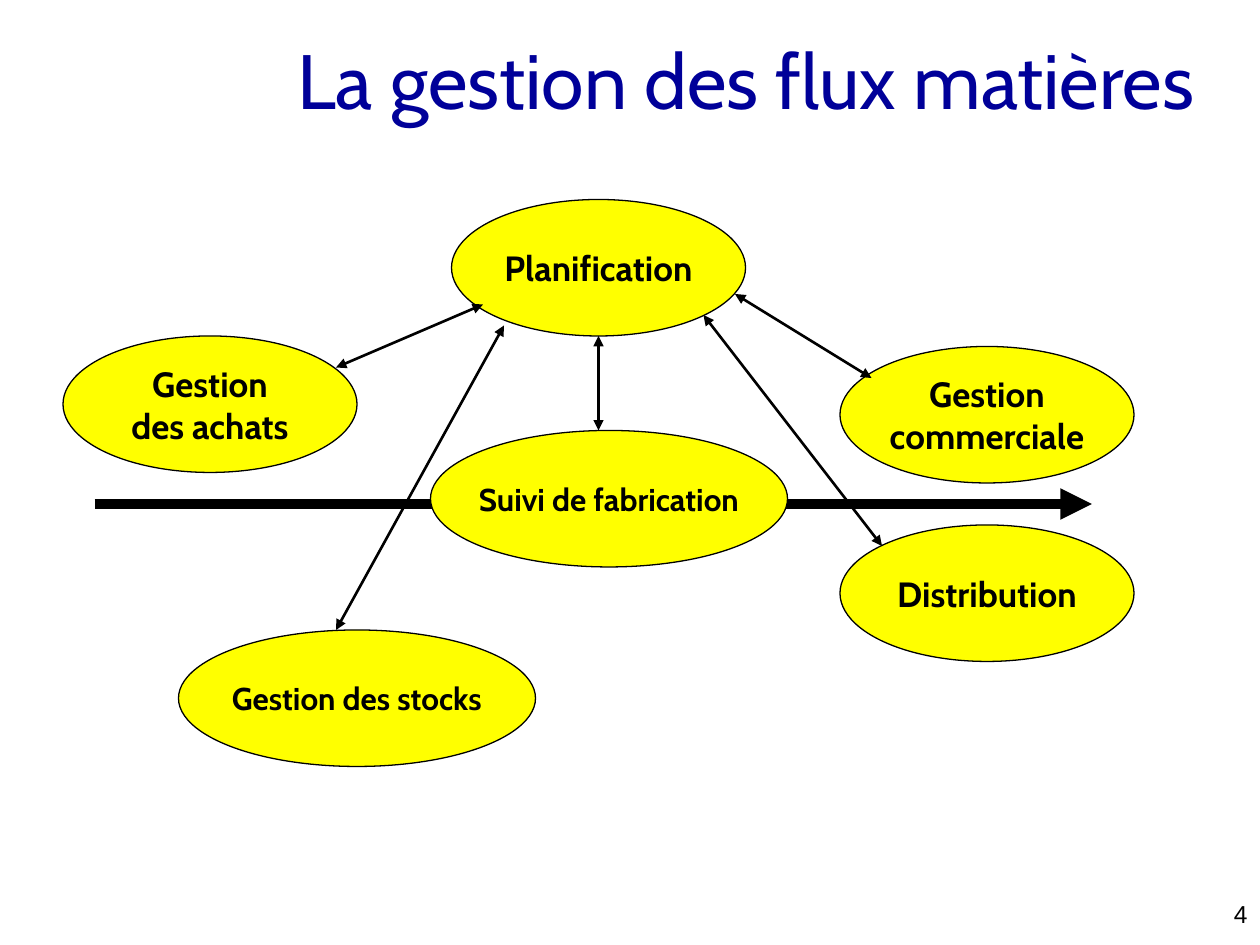
"""Build the slide on material flow management."""
from dataclasses import dataclass

from lxml import etree
from pptx import Presentation
from pptx import util as u
from pptx.dml.color import RGBColor
from pptx.enum import shapes, text
from pptx.oxml.ns import qn

BLACK, YELLOW, NAVY = "000000", "FFFF00", "000099"
OVAL_HEIGHT = 78


@dataclass
class Function:
    label: str
    x: float
    y: float
    w: float = 168
    size: float = 20


@dataclass
class Arrow:
    x1: float
    y1: float
    x2: float
    y2: float
    width: float = 1.5
    ends: tuple = ("headEnd", "tailEnd")


FLOW = Arrow(54, 288, 624, 288, 6, ("tailEnd",))
FUNCTIONS = [
    Function("Gestion\ncommerciale", 480, 198),
    Function("Gestion\ndes achats", 36, 192),
    Function("Planification", 258, 114),
    Function("Suivi de fabrication", 246, 246, 204, 18),
    Function("Distribution", 480, 300),
    Function("Gestion des stocks", 102, 360, 204, 18),
]
LINKS = [
    Arrow(276, 174, 192, 210),
    Arrow(342, 192, 342, 246),
    Arrow(420, 168, 498, 216),
    Arrow(402, 180, 504, 312),
    Arrow(288, 186, 192, 360),
]


def color(target, value: str) -> None:
    target.rgb = RGBColor.from_string(value)


def write(tf, content: str, font: str, size: float, hue: str, align, bold=False) -> None:
    p = tf.paragraphs[0]
    p.text = content
    p.alignment = align
    for r in p.runs:
        r.font.name, r.font.size, r.font.bold = font, u.Pt(size), bold
        color(r.font.color, hue)


def add_label(s, box: tuple, content: str, font: str, size: float, hue: str, anchor) -> None:
    tf = s.shapes.add_textbox(*map(u.Pt, box)).text_frame
    tf.word_wrap = True
    tf.vertical_anchor = anchor
    write(tf, content, font, size, hue, text.PP_ALIGN.RIGHT)


def add_function(s, f: Function) -> None:
    sp = s.shapes.add_shape(
        shapes.MSO_SHAPE.OVAL, u.Pt(f.x), u.Pt(f.y), u.Pt(f.w), u.Pt(OVAL_HEIGHT))
    sp.shadow.inherit = False
    sp.fill.solid()
    color(sp.fill.fore_color, YELLOW)
    color(sp.line.color, BLACK)
    sp.line.width = u.Pt(0.75)
    tf = sp.text_frame
    tf.word_wrap = False
    tf.vertical_anchor = text.MSO_ANCHOR.MIDDLE
    write(tf, f.label, "Cabin", f.size, BLACK, text.PP_ALIGN.CENTER, True)


def add_arrow(s, a: Arrow) -> None:
    c = s.shapes.add_connector(
        shapes.MSO_CONNECTOR.STRAIGHT, u.Pt(a.x1), u.Pt(a.y1), u.Pt(a.x2), u.Pt(a.y2))
    color(c.line.color, BLACK)
    c.line.width = u.Pt(a.width)
    ln = c.line._get_or_add_ln()
    for end in a.ends:
        etree.SubElement(ln, qn(f"a:{end}"), type="triangle")
    etree.SubElement(c._element.spPr, qn("a:effectLst"))


def main() -> None:
    prs = Presentation()
    prs.slide_width, prs.slide_height = u.Pt(720), u.Pt(540)
    s = prs.slides.add_slide(prs.slide_layouts[6])
    add_label(s, (570, 510, 150, 18), "4", "Arial", 14, BLACK, text.MSO_ANCHOR.TOP)
    add_label(s, (0, 0, 690, 90), "La gestion des flux matières", "Cabin", 44, NAVY,
              text.MSO_ANCHOR.MIDDLE)
    add_arrow(s, FLOW)
    for f in FUNCTIONS:
        add_function(s, f)
    for a in LINKS:
        add_arrow(s, a)
    prs.save("out.pptx")


if __name__ == "__main__":
    main()
